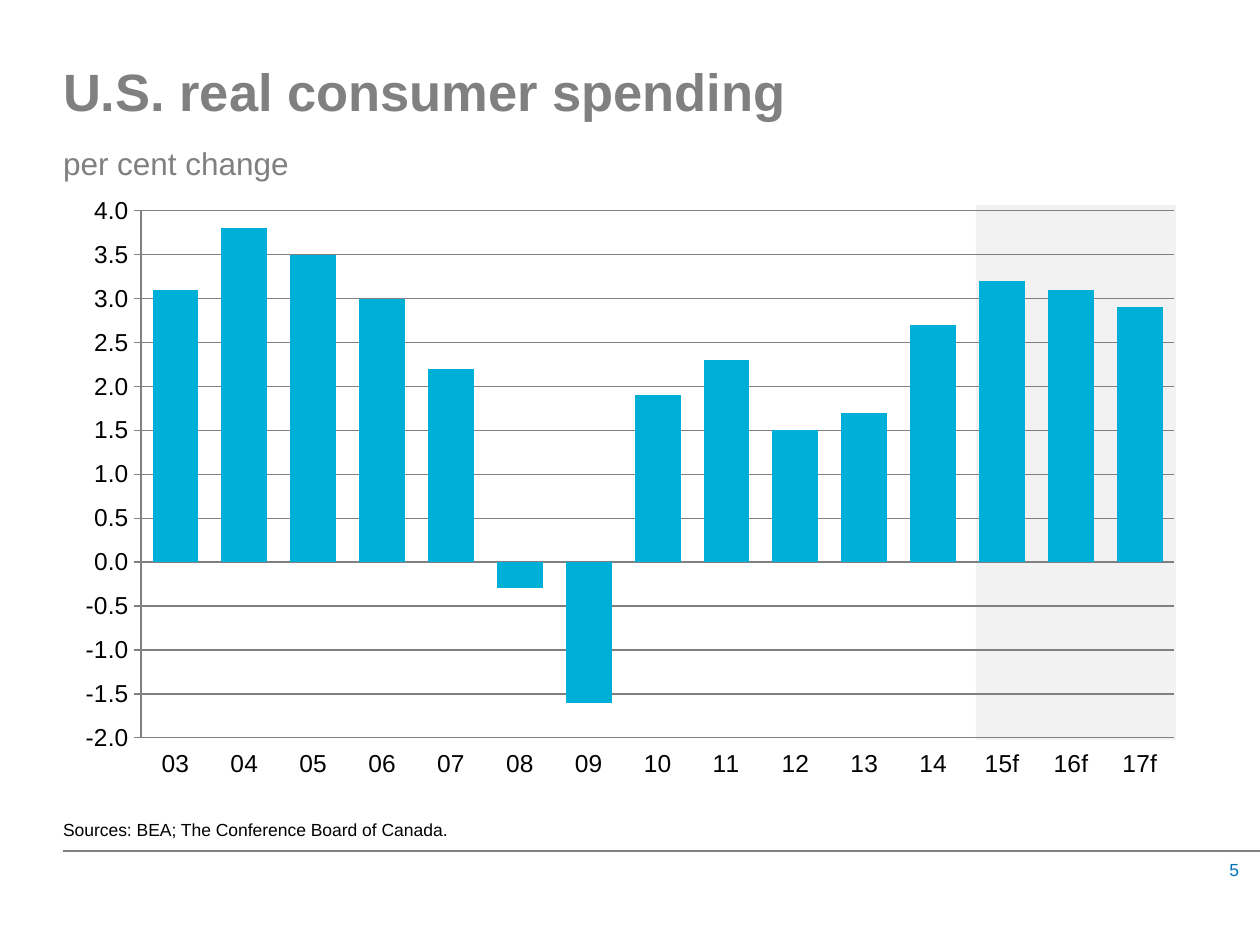
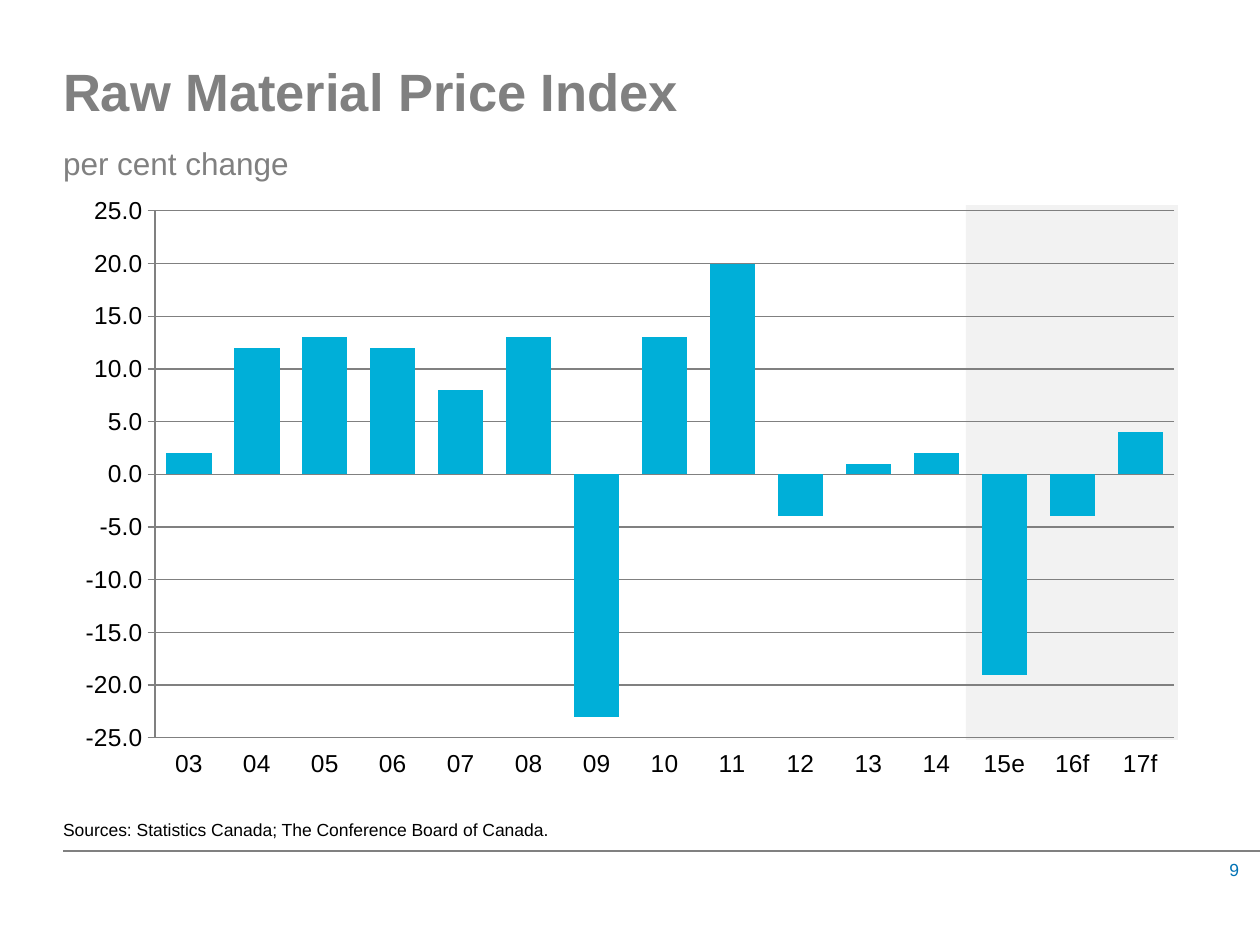
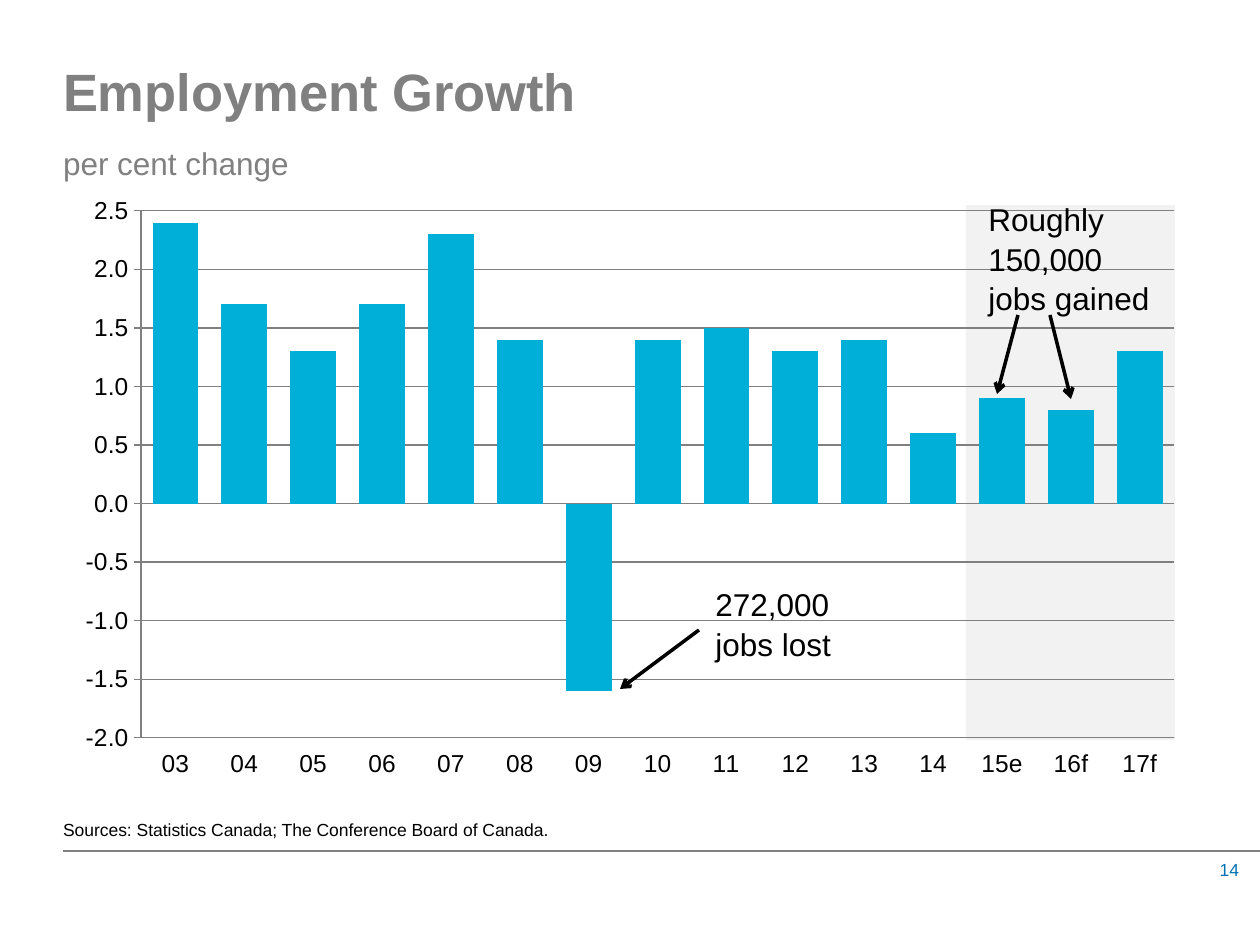
"""Build three economic bar chart slides with a common frame."""
from lxml.etree import SubElement
from pptx import Presentation
from pptx.chart.data import CategoryChartData
from pptx.dml.color import RGBColor
from pptx.enum.chart import XL_CHART_TYPE, XL_TICK_LABEL_POSITION, XL_TICK_MARK
from pptx.enum.shapes import MSO_CONNECTOR, MSO_SHAPE
from pptx.enum.text import MSO_ANCHOR, MSO_AUTO_SIZE, PP_ALIGN
from pptx.oxml.ns import qn
from pptx.util import Emu, Pt

FONT = "Arial"
GREY, BLACK, BLUE = "808080", "000000", "0072B5"
BAR, SHADE = "00AFD8", "F2F2F2"
LEFT, WIDTH = 63, 1134
SHADE_TOP, SHADE_HEIGHT = 205, 535
YEARS = [f"{year:02d}" for year in range(3, 15)]

SLIDES = [
    {"title": "U.S. real consumer spending", "number": "5",
     "source": "Sources: BEA; The Conference Board of Canada.",
     "forecast": ["15f", "16f", "17f"], "shade": (976, 200), "axis": (-2, 4, 0.5),
     "values": [3.1, 3.8, 3.5, 3, 2.2, -0.3, -1.6, 1.9, 2.3, 1.5, 1.7, 2.7, 3.2, 3.1, 2.9],
     "notes": [], "arrows": []},
    {"title": "Raw Material Price Index", "number": "9",
     "source": "Sources: Statistics Canada; The Conference Board of Canada.",
     "forecast": ["15e", "16f", "17f"], "shade": (966, 212), "axis": (-25, 25, 5),
     "values": [2, 12, 13, 12, 8, 13, -23, 13, 20, -4, 1, 2, -19, -4, 4],
     "notes": [], "arrows": []},
    {"title": "Employment Growth", "number": "14",
     "source": "Sources: Statistics Canada; The Conference Board of Canada.",
     "forecast": ["15e", "16f", "17f"], "shade": (966, 209), "axis": (-2, 2.5, 0.5),
     "values": [2.4, 1.7, 1.3, 1.7, 2.3, 1.4, -1.6, 1.4, 1.5, 1.3, 1.4, 0.6, 0.9, 0.8, 1.3],
     "notes": [("272,000 jobs lost", (703, 577, 159, 89)),
               ("Roughly 150,000 jobs gained", (976, 192, 189, 127))],
     "arrows": [(699, 630, 620, 689), (1018, 315, 997, 394), (1050, 315, 1071, 399)]},
]


def px(*lengths):
    return [Emu(round(n * 914400 / 126)) for n in lengths]


def rgb(color):
    return RGBColor.from_string(color)


def style(font, size, color, bold=False):
    font.name, font.size, font.bold = FONT, Pt(size), bold
    font.color.rgb = rgb(color)


def add_run(p, text, size, color, bold=False):
    r = p.add_run()
    r.text = text
    style(r.font, size, color, bold)


def place(sp, box, inset=True):
    sp.left, sp.top, sp.width, sp.height = px(*box)
    tf = sp.text_frame
    tf.word_wrap, tf.auto_size = True, MSO_AUTO_SIZE.NONE
    tf.vertical_anchor = MSO_ANCHOR.TOP
    if not inset:
        tf.margin_left = tf.margin_top = tf.margin_right = tf.margin_bottom = 0
    return tf.paragraphs[0]


def add_text(s, box, text, size, color, inset=True):
    p = place(s.shapes.add_textbox(*px(*box)), box, inset)
    add_run(p, text, size, color)
    return p


def add_line(s, ends, color, width, arrow=False):
    line = s.shapes.add_connector(MSO_CONNECTOR.STRAIGHT, *px(*ends))
    line.line.color.rgb, line.line.width = rgb(color), Pt(width)
    sp_pr = line.element.spPr
    if arrow:
        SubElement(sp_pr.find(qn("a:ln")), qn("a:tailEnd"), type="arrow")
    SubElement(sp_pr, qn("a:effectLst"))
    return line


def fill_placeholders(s, title, source):
    p = place(s.shapes.title, (LEFT, 63, WIDTH, 122), inset=False)
    p.alignment, p.line_spacing = PP_ALIGN.LEFT, Pt(34)
    add_run(p, title, 30, GREY, bold=True)
    p.add_line_break()
    add_run(p, "per cent change", 18, GREY)

    p = place(s.placeholders[1], (LEFT, 819, 1119, 32), inset=False)
    p_pr = p._p.get_or_add_pPr()
    p_pr.set("marL", "0")
    p_pr.set("indent", "0")
    SubElement(p_pr, qn("a:buNone"))
    p.space_before = Pt(0)
    add_run(p, source, 10, BLACK)


def add_shade(s, left, width):
    sp = s.shapes.add_shape(MSO_SHAPE.RECTANGLE, *px(left, SHADE_TOP, width, SHADE_HEIGHT))
    sp.shadow.inherit = False
    sp.fill.solid()
    sp.fill.fore_color.rgb = rgb(SHADE)
    sp.line.fill.background()


def add_bars(s, categories, values, axis):
    data = CategoryChartData(number_format="#,##0.0")
    data.categories = categories
    data.add_series("Series 1", values)
    chart = s.shapes.add_chart(
        XL_CHART_TYPE.COLUMN_CLUSTERED, *px(LEFT, 185, WIDTH, 605), data).chart
    chart.has_legend = chart.has_title = False
    style(chart.font, 18, BLACK)

    plot = chart.plots[0]
    plot.gap_width, plot.vary_by_categories = 50, False
    series = plot.series[0]
    series.invert_if_negative = False
    series.format.fill.solid()
    series.format.fill.fore_color.rgb = rgb(BAR)

    years, scale = chart.category_axis, chart.value_axis
    years.tick_label_position = XL_TICK_LABEL_POSITION.LOW
    years.major_tick_mark = XL_TICK_MARK.NONE
    years.format.line.fill.background()
    scale.minimum_scale, scale.maximum_scale, scale.major_unit = axis
    scale.major_tick_mark = XL_TICK_MARK.OUTSIDE
    scale.tick_labels.number_format = "#,##0.0"
    scale.tick_labels.number_format_is_linked = False
    for line in (scale.format.line, scale.major_gridlines.format.line):
        line.color.rgb, line.width = rgb(GREY), Pt(0.75)
    for labels in (years.tick_labels, scale.tick_labels):
        style(labels.font, 14, BLACK)


def main():
    prs = Presentation()
    prs.slide_width, prs.slide_height = px(1260, 945)
    layout = prs.slide_layouts[1]
    for index, item in enumerate(SLIDES):
        s = prs.slides.add_slide(layout)
        if index == 0:
            rule = add_line(s, (LEFT, 851, 1260, 851), GREY, 0.75)
            layout.shapes.element.append(rule.element)
        fill_placeholders(s, item["title"], item["source"])
        p = add_text(s, (1197, 859, 42, 21), item["number"], 10, BLUE, inset=False)
        p.alignment = PP_ALIGN.RIGHT
        add_shade(s, *item["shade"])
        add_bars(s, YEARS + item["forecast"], item["values"], item["axis"])
        for text, box in item["notes"]:
            add_text(s, box, text, 18, BLACK).line_spacing = 1.05
        for ends in item["arrows"]:
            add_line(s, ends, BLACK, 2, arrow=True)
    prs.save("out.pptx")


if __name__ == "__main__":
    main()
